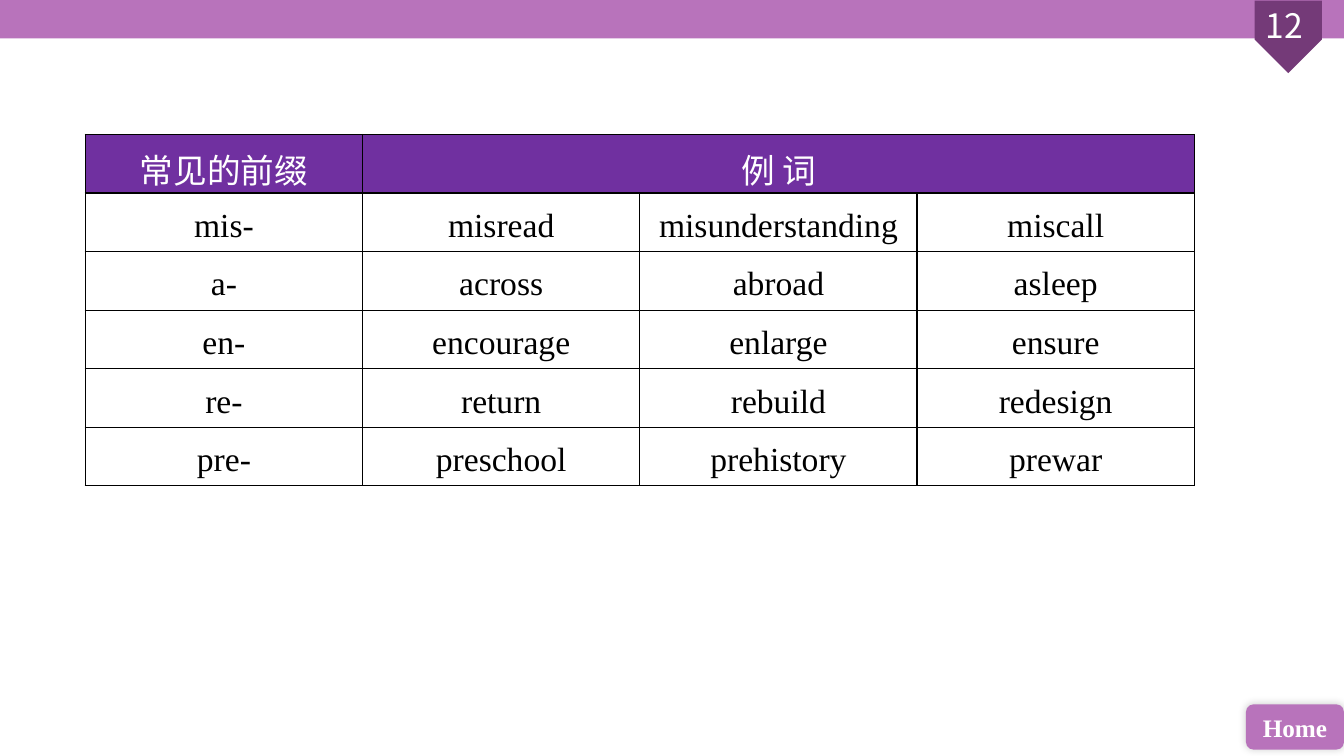
import lxml.etree
import pptx
import pptx.dml.color
import pptx.enum.shapes
import pptx.enum.text
import pptx.oxml
import pptx.oxml.ns
import pptx.util

Cm = pptx.util.Cm
Pt = pptx.util.Pt
RGBColor = pptx.dml.color.RGBColor
SHAPE = pptx.enum.shapes.MSO_SHAPE
ANCHOR = pptx.enum.text.MSO_ANCHOR

ORCHID = RGBColor(0xB8, 0x73, 0xBB)
PLUM = RGBColor(0x74, 0x3A, 0x78)
PURPLE = RGBColor(0x70, 0x30, 0xA0)
WHITE = RGBColor(0xFF, 0xFF, 0xFF)
BLACK = RGBColor(0, 0, 0)

SERIF = "Times New Roman"
SANS = "Noto Sans CJK SC"
DRAWING_NS = pptx.oxml.ns.nsdecls("a")

HEADINGS = ["常见的前缀", "例 词"]
PREFIX_EXAMPLES = [
    ["mis-", "misread", "misunderstanding", "miscall"],
    ["a-", "across", "abroad", "asleep"],
    ["en-", "encourage", "enlarge", "ensure"],
    ["re-", "return", "rebuild", "redesign"],
    ["pre-", "preschool", "prehistory", "prewar"],
]


def write_centred(frame, text, size, color, font_name, bold=False):
    frame.text = text
    paragraph = frame.paragraphs[0]
    paragraph.alignment = pptx.enum.text.PP_ALIGN.CENTER
    font = paragraph.font
    font.size, font.bold, font.name = Pt(size), bold, font_name
    font.color.rgb = color
    properties = paragraph._p.pPr.find(pptx.oxml.ns.qn("a:defRPr"))
    east_asian = lxml.etree.SubElement(properties, pptx.oxml.ns.qn("a:ea"))
    east_asian.set("typeface", SANS)
    return paragraph


def add_plain_shape(slide, kind, left, top, width, height, color):
    shape = slide.shapes.add_shape(kind, left, top, width, height)
    shape.shadow.inherit = False
    shape.fill.solid()
    shape.fill.fore_color.rgb = color
    shape.line.fill.background()
    return shape


def add_page_header(slide, left, top, width, height, page_number):
    add_plain_shape(slide, SHAPE.RECTANGLE, left, top, width, height, ORCHID)
    ribbon = add_plain_shape(slide, SHAPE.PENTAGON, left + width - Cm(2.32),
                             top + Cm(0.08), Cm(1.83), Cm(1.7), PLUM)
    ribbon.rotation = 90
    number = slide.shapes.add_textbox(left + width - Cm(2.65), top, Cm(2.49), Cm(1.27))
    number.text_frame.word_wrap = True
    number.text_frame.auto_size = pptx.enum.text.MSO_AUTO_SIZE.SHAPE_TO_FIT_TEXT
    write_centred(number.text_frame, f"{page_number} ", 24, WHITE, SANS)


def add_home_button(slide, left, top, width, height):
    button = add_plain_shape(slide, SHAPE.ROUNDED_RECTANGLE, left, top, width, height, ORCHID)
    effects = button._element.spPr.find(pptx.oxml.ns.qn("a:effectLst"))
    effects.append(pptx.oxml.parse_xml(
        f'<a:outerShdw {DRAWING_NS} blurRad="{Pt(6)}" dist="0" dir="18900000">'
        f'<a:srgbClr val="{BLACK}"><a:alpha val="20000"/></a:srgbClr></a:outerShdw>'))
    button.text_frame.vertical_anchor = ANCHOR.MIDDLE
    button.text_frame.word_wrap = False
    write_centred(button.text_frame, "Home", 18, WHITE, SERIF, bold=True)


def add_cell_borders(cell):
    properties = cell._tc.get_or_add_tcPr()
    for side in ("lnL", "lnR", "lnT", "lnB"):
        properties.append(pptx.oxml.parse_xml(
            f'<a:{side} {DRAWING_NS} w="{Pt(1)}"><a:solidFill>'
            f'<a:srgbClr val="{BLACK}"/></a:solidFill></a:{side}>'))


def add_prefix_table(slide, left, top, width, height):
    rows = [HEADINGS + ["", ""]] + PREFIX_EXAMPLES
    table = slide.shapes.add_table(len(rows), len(rows[0]), left, top, width, height).table
    table.first_row = table.horz_banding = False
    for row_index, words in enumerate(rows):
        is_heading = row_index == 0
        for column_index, word in enumerate(words):
            cell = table.cell(row_index, column_index)
            add_cell_borders(cell)
            if is_heading:
                cell.fill.solid()
                cell.fill.fore_color.rgb = PURPLE
            else:
                cell.fill.background()
            cell.margin_top = cell.margin_bottom = 0
            cell.vertical_anchor = ANCHOR.MIDDLE
            if word:
                color = WHITE if is_heading else BLACK
                write_centred(cell.text_frame, word, 24, color, SERIF).line_spacing = 1.2
    table.cell(0, 1).merge(table.cell(0, 3))


def main():
    presentation = pptx.Presentation()
    presentation.slide_width, presentation.slide_height = Cm(33.87), Cm(19.05)
    slide = presentation.slides.add_slide(presentation.slide_layouts[6])
    add_page_header(slide, 0, 0, presentation.slide_width, Cm(0.97), 12)
    add_home_button(slide, Cm(31.4), Cm(17.75), Cm(2.47), Cm(1.14))
    add_prefix_table(slide, Cm(2.15), Cm(3.39), Cm(27.95), Cm(8.85))
    presentation.save("out.pptx")


if __name__ == "__main__":
    main()
